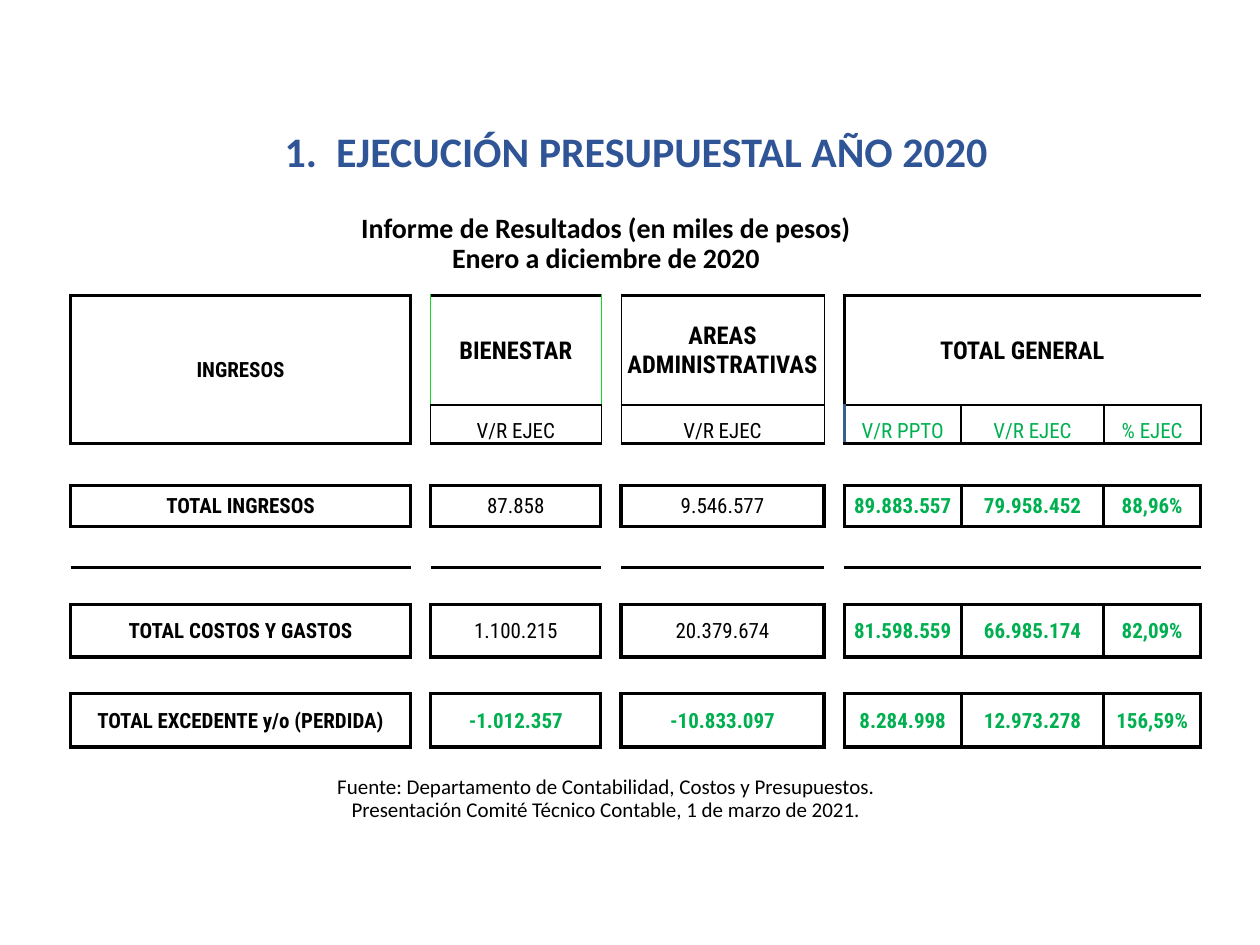
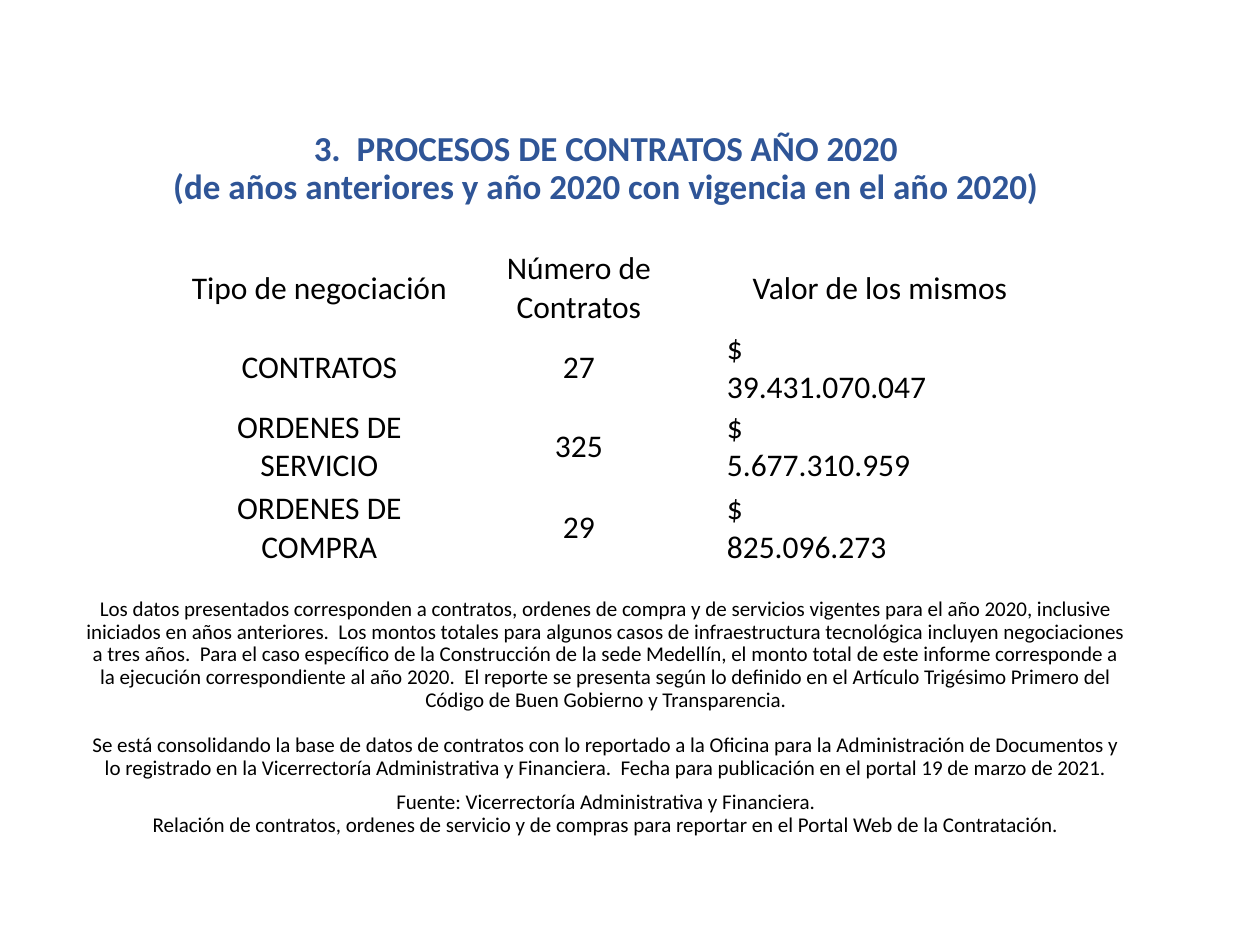
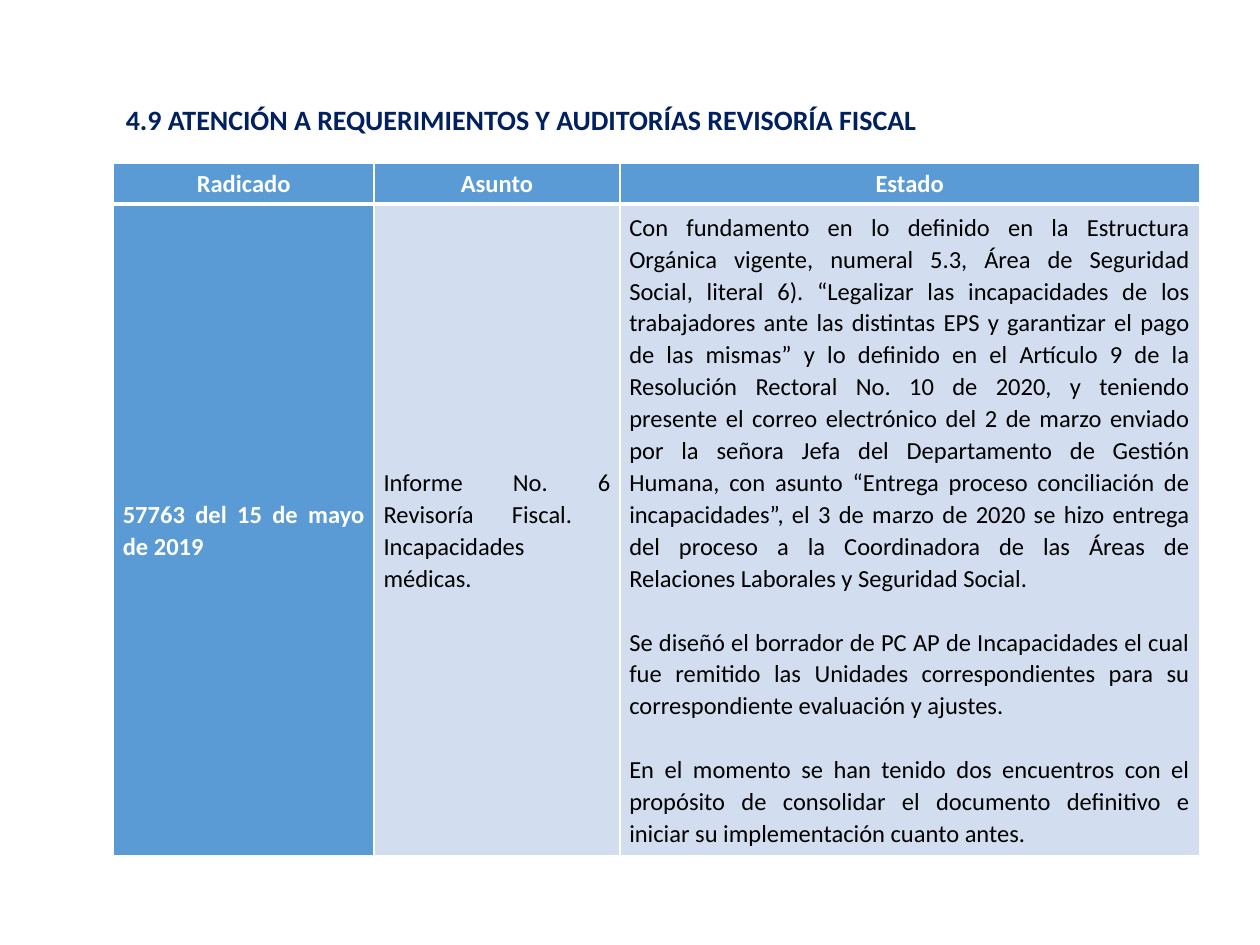
from lxml.etree import SubElement
from pptx import Presentation
from pptx.dml.color import RGBColor
from pptx.enum.text import MSO_ANCHOR, PP_ALIGN
from pptx.oxml.ns import qn
from pptx.util import Pt

COLORS = {
    "black": "000000", "white": "FFFFFF", "title": "2F5597", "section": "002060",
    "green": "00B050", "lime": "0FD927", "steel": "366092",
    "header": "5B9BD5", "body": "D2DEEF",
}
NO_STYLE = "{2D5ABB26-0587-4C30-8999-92F81FD0307C}"
SIDES = {"L": (0, -1, "R"), "R": (0, 1, "L"), "T": (-1, 0, "B"), "B": (1, 0, "T")}


def write_text(frame, lines, size, color="black", bold=False, align=PP_ALIGN.CENTER,
               spacing=1.0, gap=0, font="Calibri", tab=None):
    """Write one paragraph per line, with gap points between paragraphs."""
    frame.word_wrap = True
    for index, line in enumerate(lines):
        paragraph = frame.paragraphs[0] if index == 0 else frame.add_paragraph()
        paragraph.text = line
        paragraph.alignment = align
        paragraph.line_spacing = spacing
        if index:
            paragraph.space_before = Pt(gap)
        if tab:
            stops = SubElement(paragraph._p.get_or_add_pPr(), qn("a:tabLst"))
            SubElement(stops, qn("a:tab"), pos=str(Pt(tab)), algn="r")
        paragraph.font.size = Pt(size)
        paragraph.font.name = font
        paragraph.font.bold = bold
        paragraph.font.color.rgb = RGBColor.from_string(COLORS[color])
        if not line:
            SubElement(paragraph._p, qn("a:endParaRPr"), sz=str(size * 100))


def format_cell(cell, borders, fill="white", side_margin=0.7, top_margin=0.7,
                anchor=MSO_ANCHOR.MIDDLE):
    """Set margins, fill and borders, given as {side: (color, width)}."""
    cell.margin_left = cell.margin_right = Pt(side_margin)
    cell.margin_top, cell.margin_bottom = Pt(top_margin), Pt(0)
    cell.vertical_anchor = anchor
    properties = cell._tc.get_or_add_tcPr()
    for side in SIDES:
        if side in borders:
            color, width = borders[side]
            line = SubElement(properties, qn(f"a:ln{side}"), w=str(Pt(width)))
            solid = SubElement(line, qn("a:solidFill"))
            SubElement(solid, qn("a:srgbClr"), val=COLORS[color])
    cell.fill.solid()
    cell.fill.fore_color.rgb = RGBColor.from_string(COLORS[fill])


prs = Presentation()
prs.slide_width, prs.slide_height = Pt(720), Pt(540)
budget, contracts, audits = [prs.slides.add_slide(prs.slide_layouts[6]) for _ in range(3)]

# Titles, subtitles, notes and sources
blocks = [
    (budget, (57.6, 69.8, 612, 34.6), 24, "title", True,
     ["1.  EJECUCIÓN PRESUPUESTAL AÑO 2020"]),
    (budget, (40.3, 113, 612, 47.5), 16, "black", True,
     ["Informe de Resultados (en miles de pesos)", "Enero a diciembre de 2020"]),
    (budget, (40.3, 425.5, 612, 47.5), 12, "black", False,
     ["Fuente: Departamento de Contabilidad, Costos y Presupuestos.",
      "Presentación Comité Técnico Contable, 1 de marzo de 2021."]),
    (contracts, (40.3, 59.8, 612, 61.9), 20, "title", True,
     ["3.  PROCESOS DE CONTRATOS AÑO 2020\v"
      "(de años anteriores y año 2020 con vigencia en el año 2020)"]),
    (contracts, (40.3, 303.8, 612, 145.4), 12, "black", False,
     ["Los datos presentados corresponden a contratos, ordenes de compra y de servicios "
      "vigentes para el año 2020, inclusive iniciados en años anteriores.  Los montos "
      "totales para algunos casos de infraestructura tecnológica incluyen negociaciones a "
      "tres años.  Para el caso específico de la Construcción de la sede Medellín, el monto "
      "total de este informe corresponde a la ejecución correspondiente al año 2020.  El "
      "reporte se presenta según lo definido en el Artículo Trigésimo Primero del Código de "
      "Buen Gobierno y Transparencia.",
      "Se está consolidando la base de datos de contratos con lo reportado a la Oficina para "
      "la Administración de Documentos y lo registrado en la Vicerrectoría Administrativa y "
      "Financiera.  Fecha para publicación en el portal 19 de marzo de 2021."]),
    (contracts, (40.3, 449.3, 612, 32.4), 12, "black", False,
     ["Fuente: Vicerrectoría Administrativa y Financiera.",
      "Relación de contratos, ordenes de servicio y de compras para reportar en el Portal "
      "Web de la Contratación."]),
    (audits, (64.8, 40.3, 655.2, 41), 16, "section", True,
     ["4.9 ATENCIÓN A REQUERIMIENTOS Y AUDITORÍAS REVISORÍA FISCAL"]),
]
for slide, box, size, color, bold, lines in blocks:
    frame = slide.shapes.add_textbox(*map(Pt, box)).text_frame
    frame.vertical_anchor = MSO_ANCHOR.BOTTOM
    note_gap = 13 if len(lines[0]) > 200 else 0
    align, spacing = (PP_ALIGN.JUSTIFY, 1.07) if slide is audits else (PP_ALIGN.CENTER, 0.9)
    write_text(frame, lines, size, color, bold, align, spacing, note_gap)

# Empty tables, one per slide
tables = []
for slide, left, top, widths, heights in [
    (budget, 40.3, 169, [194.4, 11.5, 97.2, 11.5, 116, 11.5, 67, 81.4, 55.4],
     [62.5, 22, 24, 23.5, 23.5, 21, 30, 21, 30.5]),
    (contracts, 100.8, 141.1, [163.4, 133.2, 211], [46.6, 23.3, 46.6, 46.6]),
    (audits, 64.8, 93.2, [149, 140.4, 331.2], [23.3, 372.7]),
]:
    table = slide.shapes.add_table(len(heights), len(widths), Pt(left), Pt(top),
                                   Pt(sum(widths)), Pt(sum(heights))).table
    table.first_row = table.horz_banding = False
    table._tbl.tblPr.find(qn("a:tableStyleId")).text = NO_STYLE
    for column, width in zip(table.columns, widths):
        column.width = Pt(width)
    for row, height in zip(table.rows, heights):
        row.height = Pt(height)
    tables.append(table)
budget_table, contracts_table, audits_table = tables

# Budget: boxed columns with narrow gaps between them
BOXED = [0, 2, 4, 6, 7, 8]
budget_rows = {
    0: ["INGRESOS", "BIENESTAR", "AREAS ADMINISTRATIVAS", "TOTAL GENERAL", "", ""],
    1: ["", "V/R EJEC", "V/R EJEC", "V/R PPTO", "V/R EJEC", "% EJEC"],
    3: ["TOTAL INGRESOS", "87.858", "9.546.577", "89.883.557", "79.958.452", "88,96%"],
    6: ["TOTAL COSTOS Y GASTOS", "1.100.215", "20.379.674", "81.598.559", "66.985.174",
        "82,09%"],
    8: ["TOTAL EXCEDENTE y/o (PERDIDA)", "-1.012.357", "-10.833.097", "8.284.998",
        "12.973.278", "156,59%"],
}
thick, medium, thin = ("black", 2), ("black", 1.5), ("black", 0.5)
lime, steel = ("lime", 0.5), ("steel", 2)
frames = {(row, col): dict.fromkeys(SIDES, thick) for row in (3, 6, 8) for col in BOXED}
frames |= {
    (0, 0): {"L": thick, "R": thick, "T": thick, "B": thick},
    (1, 0): {"L": thick, "R": thick, "B": thick},
    (0, 2): {"L": lime, "R": lime, "T": thick, "B": medium},
    (1, 2): {"L": thin, "R": thin, "T": medium, "B": medium},
    (0, 4): {"L": thin, "R": thin, "T": thick, "B": medium},
    (1, 4): {"R": thin, "T": medium, "B": medium},
    (0, 6): {"L": thick, "T": thick, "B": medium},
    (0, 7): {"T": thick, "B": medium},
    (0, 8): {"T": thick, "B": medium},
    (1, 6): {"L": steel, "R": medium, "T": medium, "B": medium},
    (1, 7): dict.fromkeys(SIDES, medium),
    (1, 8): dict.fromkeys(SIDES, medium),
}
borders = {(row, col): dict(frames.get((row, col), {})) for row in range(9) for col in range(9)}
for (row, col), sides in frames.items():
    for side, line in sides.items():
        down, across, opposite = SIDES[side]
        neighbour = (row + down, col + across)
        if neighbour in borders and neighbour != (1, 0):
            borders[neighbour].setdefault(opposite, line)

budget_table.cell(0, 0).merge(budget_table.cell(1, 0))
budget_table.cell(0, 6).merge(budget_table.cell(0, 8))
for (row, col), sides in borders.items():
    cell = budget_table.cell(row, col)
    text = budget_rows[row][BOXED.index(col)] if row in budget_rows and col in BOXED else ""
    green = row > 0 and (col >= 6 or row == 8 and col > 0)
    bold = col == 0 or row == 0 or green and row > 1
    size = 14 if row == 0 and col > 0 else 12
    format_cell(cell, sides, anchor=MSO_ANCHOR.BOTTOM if row == 1 else MSO_ANCHOR.MIDDLE)
    write_text(cell.text_frame, [text], size, "green" if green else "black", bold,
               font="Roboto Condensed")

# Contracts: amounts run from the currency sign to a right tab
contract_rows = [
    ["Tipo de negociación", "Número de Contratos", "Valor de los mismos"],
    ["CONTRATOS", "27", "$\t39.431.070.047"],
    ["ORDENES DE SERVICIO", "325", "$\t5.677.310.959"],
    ["ORDENES DE COMPRA", "29", "$\t825.096.273"],
]
white_frame = dict.fromkeys(SIDES, ("white", 1))
for row, texts in enumerate(contract_rows):
    for col, text in enumerate(texts):
        cell = contracts_table.cell(row, col)
        amount = "\t" in text
        format_cell(cell, white_frame, side_margin=18 if amount else 0.7)
        write_text(cell.text_frame, [text], 18, tab=175 if amount else None,
                   align=PP_ALIGN.LEFT if amount else PP_ALIGN.CENTER)

# Audits: request, subject and status
audit_rows = [
    [["Radicado"], ["Asunto"], ["Estado"]],
    [["57763 del 15 de mayo de 2019"],
     ["Informe No. 6 Revisoría Fiscal.  Incapacidades médicas."],
     ["Con fundamento en lo definido en la Estructura Orgánica vigente, numeral 5.3, Área de "
      "Seguridad Social, literal 6). “Legalizar las incapacidades de los trabajadores ante "
      "las distintas EPS y garantizar el pago de las mismas” y lo definido en el Artículo 9 "
      "de la Resolución Rectoral No. 10 de 2020, y teniendo presente el correo electrónico "
      "del 2 de marzo enviado por la señora Jefa del Departamento de Gestión Humana, con "
      "asunto “Entrega proceso conciliación de incapacidades”, el 3 de marzo de 2020 se hizo "
      "entrega del proceso a la Coordinadora de las Áreas de Relaciones Laborales y "
      "Seguridad Social.",
      "Se diseñó el borrador de PC AP de Incapacidades el cual fue remitido las Unidades "
      "correspondientes para su correspondiente evaluación y ajustes.",
      "En el momento se han tenido dos encuentros con el propósito de consolidar el "
      "documento definitivo e iniciar su implementación cuanto antes."]],
]
for row, entries in enumerate(audit_rows):
    edge = {"T": ("white", 3)} if row else {"B": ("white", 3)}
    for col, lines in enumerate(entries):
        cell = audits_table.cell(row, col)
        heading = row == 0 or col == 0
        format_cell(cell, white_frame | edge, "header" if heading else "body", 5.4, 0)
        write_text(cell.text_frame, lines, 14, "white" if heading else "black", heading,
                   PP_ALIGN.JUSTIFY if row else PP_ALIGN.CENTER, 1.07, 18.3)

prs.save("out.pptx")
